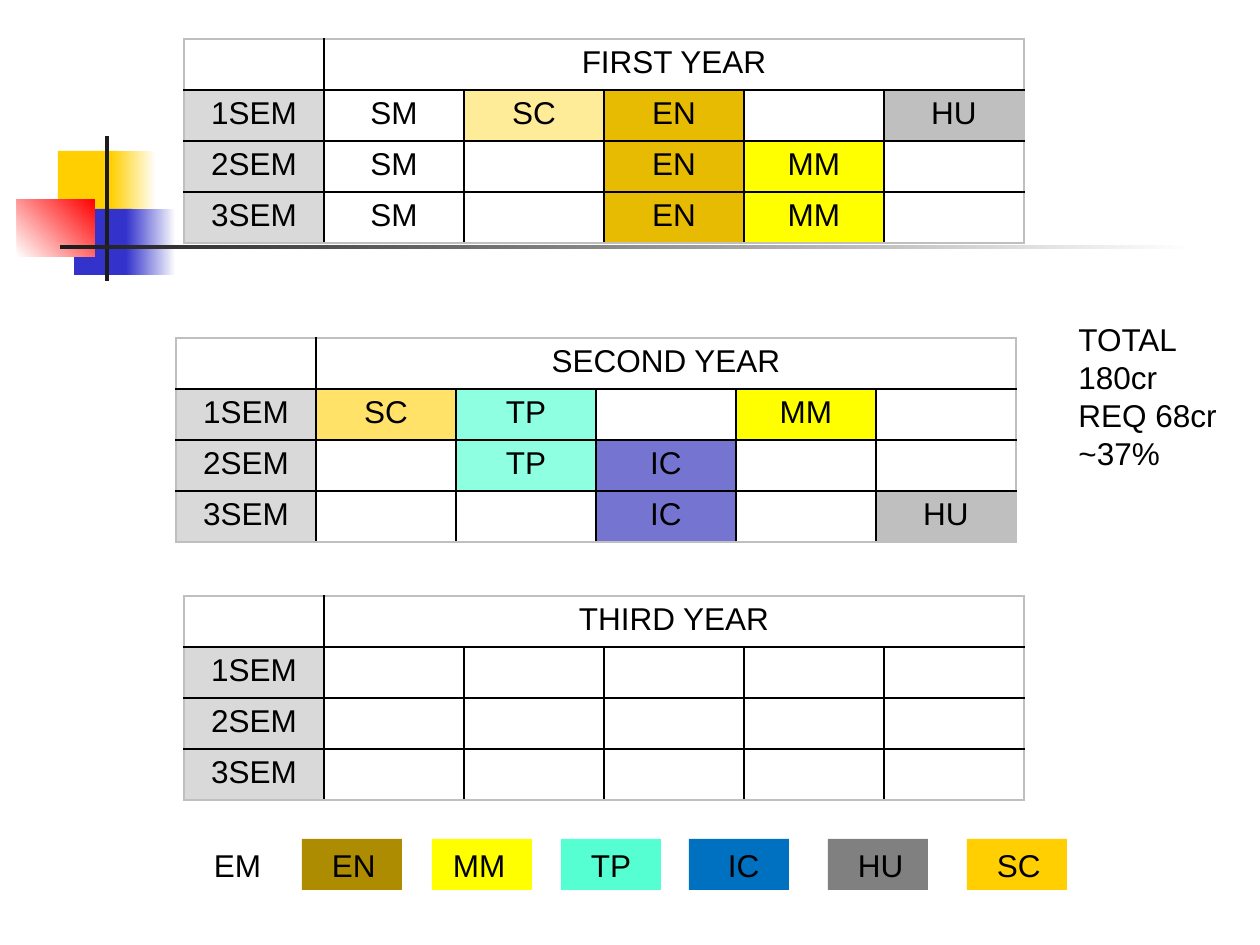
from lxml import etree
from pptx import Presentation
from pptx.dml.color import RGBColor
from pptx.enum.shapes import MSO_SHAPE
from pptx.enum.text import MSO_ANCHOR, PP_ALIGN
from pptx.oxml.ns import qn
from pptx.util import Emu, Pt

RECT = MSO_SHAPE.RECTANGLE
TOP, MIDDLE = MSO_ANCHOR.TOP, MSO_ANCHOR.MIDDLE
LEFT, CENTER = PP_ALIGN.LEFT, PP_ALIGN.CENTER

PX = 914400 / 126
COL_W, ROW_H = 140, 51
LEGEND_Y, LEGEND_W, LEGEND_H = 839, 100, 51

BLACK = RGBColor(0x00, 0x00, 0x00)
WHITE = RGBColor(0xFF, 0xFF, 0xFF)
CHARCOAL = RGBColor(0x1C, 0x1C, 0x1C)
GOLD = RGBColor(0xFF, 0xCF, 0x01)
GOLD_MID = RGBColor(0xFF, 0xE2, 0x67)
GOLD_PALE = RGBColor(0xFF, 0xEC, 0x99)
OCHRE = RGBColor(0xE7, 0xBB, 0x01)
OCHRE_DARK = RGBColor(0xAD, 0x8C, 0x01)
YELLOW = RGBColor(0xFF, 0xFF, 0x00)
MINT = RGBColor(0x56, 0xFF, 0xD2)
MINT_PALE = RGBColor(0x8E, 0xFF, 0xE1)
INDIGO = RGBColor(0x33, 0x33, 0xCC)
INDIGO_PALE = RGBColor(0x75, 0x75, 0xD1)
BLUE = RGBColor(0x00, 0x70, 0xC0)
RED = RGBColor(0xFF, 0x00, 0x00)
GREY_DARK = RGBColor(0x80, 0x80, 0x80)
GREY = RGBColor(0xBF, 0xBF, 0xBF)
GREY_PALE = RGBColor(0xD9, 0xD9, 0xD9)

SUBJECT_FILLS = {"SM": WHITE, "SC": GOLD_MID, "EN": OCHRE, "MM": YELLOW,
                 "TP": MINT_PALE, "IC": INDIGO_PALE, "HU": GREY}

# left, top, title, semesters, fills that differ from SUBJECT_FILLS
YEARS = [
    (176, 338, "SECOND YEAR", [["SC", "TP", "", "MM", ""],
                               ["", "TP", "IC", "", ""],
                               ["", "", "IC", "", "HU"]], {}),
    (184, 596, "THIRD YEAR", [[""] * 5] * 3, {}),
    (184, 39, "FIRST YEAR", [["SM", "SC", "EN", "", "HU"],
                             ["SM", "", "EN", "MM", ""],
                             ["SM", "", "EN", "MM", ""]], {"SC": GOLD_PALE}),
]

# left, text, fill, text indent
LEGEND = [
    (184, "EM", WHITE, 30), (302, "EN", OCHRE_DARK, 30),
    (432, "MM", YELLOW, 21), (561, "TP", MINT, 30), (689, "IC", BLUE, 39),
    (828, "HU", GREY_DARK, 30), (967, "SC", GOLD, 30),
]

# left, top, width, height, colours (two make a gradient), angle
ORNAMENT = [
    (58, 151, 60, 66, [GOLD], 0),
    (111, 151, 45, 66, [GOLD, WHITE], 0),
    (74, 209, 58, 66, [INDIGO], 0),
    (126, 209, 50, 66, [INDIGO, WHITE], 0),
    (17, 199, 78, 58, [WHITE, RED], 45),
    (105, 136, 4, 145, [CHARCOAL], 0),
    (60, 245, 1134, 4, [CHARCOAL, WHITE], 0),
]


def px(*values):
    return [Emu(round(v * PX)) for v in values]


class SlideBuilder:
    def __init__(self, slide, font="Arial", size=18, color=BLACK):
        self.slide = slide
        self.font, self.size, self.color = font, size, color

    def set_text(self, p, text, align=LEFT):
        p.text = text
        p.alignment = align
        p.font.name = self.font
        p.font.size = Pt(self.size)
        p.font.color.rgb = self.color

    def rect(self, x, y, w, h, colors, angle=0):
        s = self.slide.shapes.add_shape(RECT, *px(x, y, w, h))
        s.shadow.inherit = False
        s.line.fill.background()
        if len(colors) == 1:
            s.fill.solid()
            s.fill.fore_color.rgb = colors[0]
        else:
            s.fill.gradient()
            s.fill.gradient_angle = angle
            for stop, color in zip(s.fill.gradient_stops, colors):
                stop.color.rgb = color
        return s

    def legend_box(self, x, text, fill, indent):
        s = self.rect(x, LEGEND_Y, LEGEND_W, LEGEND_H, [fill])
        tf = s.text_frame
        tf.vertical_anchor = MIDDLE
        tf.margin_left, = px(indent)
        self.set_text(tf.paragraphs[0], text)

    def text_box(self, x, y, w, h, lines):
        tf = self.slide.shapes.add_textbox(*px(x, y, w, h)).text_frame
        tf.word_wrap = True
        for i, line in enumerate(lines):
            p = tf.add_paragraph() if i else tf.paragraphs[0]
            self.set_text(p, line)

    def borders(self, cell, outer):
        """Draw grey lines on the sides named in outer, black on the rest."""
        tcPr = cell._tc.get_or_add_tcPr()
        for side in "LRTB":
            ln = etree.SubElement(tcPr, qn(f"a:ln{side}"), w=str(Pt(1)))
            fill = etree.SubElement(ln, qn("a:solidFill"))
            color = GREY if side in outer else BLACK
            etree.SubElement(fill, qn("a:srgbClr"), val=str(color))

    def year_table(self, x, y, title, semesters, special_fills):
        fills = SUBJECT_FILLS | special_fills
        rows = [["", title, "", "", "", ""]]
        rows += [[f"{n}SEM", *row] for n, row in enumerate(semesters, 1)]
        n_rows, n_cols = len(rows), len(rows[0])
        table = self.slide.shapes.add_table(
            n_rows, n_cols, *px(x, y, n_cols * COL_W, n_rows * ROW_H)).table
        table.first_row = table.horz_banding = False
        for col in table.columns:
            col.width, = px(COL_W)
        for r, row in enumerate(rows):
            table.rows[r].height, = px(ROW_H)
            for c, text in enumerate(row):
                cell = table.cell(r, c)
                edges = {"L": c == 0, "R": c == n_cols - 1 or r == 0 < c,
                         "T": r == 0, "B": r == n_rows - 1}
                self.borders(cell, [side for side in edges if edges[side]])
                fill = GREY_PALE if r and c == 0 else fills.get(text)
                if fill is None:
                    cell.fill.background()
                else:
                    cell.fill.solid()
                    cell.fill.fore_color.rgb = fill
                cell.vertical_anchor = TOP
                self.set_text(cell.text_frame.paragraphs[0], text, CENTER)
        table.cell(0, 1).merge(table.cell(0, n_cols - 1))


def main():
    prs = Presentation()
    prs.slide_width, prs.slide_height = px(1260, 945)
    builder = SlideBuilder(prs.slides.add_slide(prs.slide_layouts[6]))
    for bar in ORNAMENT:
        builder.rect(*bar)
    for year in YEARS:
        builder.year_table(*year)
    for entry in LEGEND:
        builder.legend_box(*entry)
    builder.text_box(1066, 314, 194, 127, ["TOTAL 180cr", "REQ 68cr", "~37%"])
    prs.save("out.pptx")


if __name__ == "__main__":
    main()
